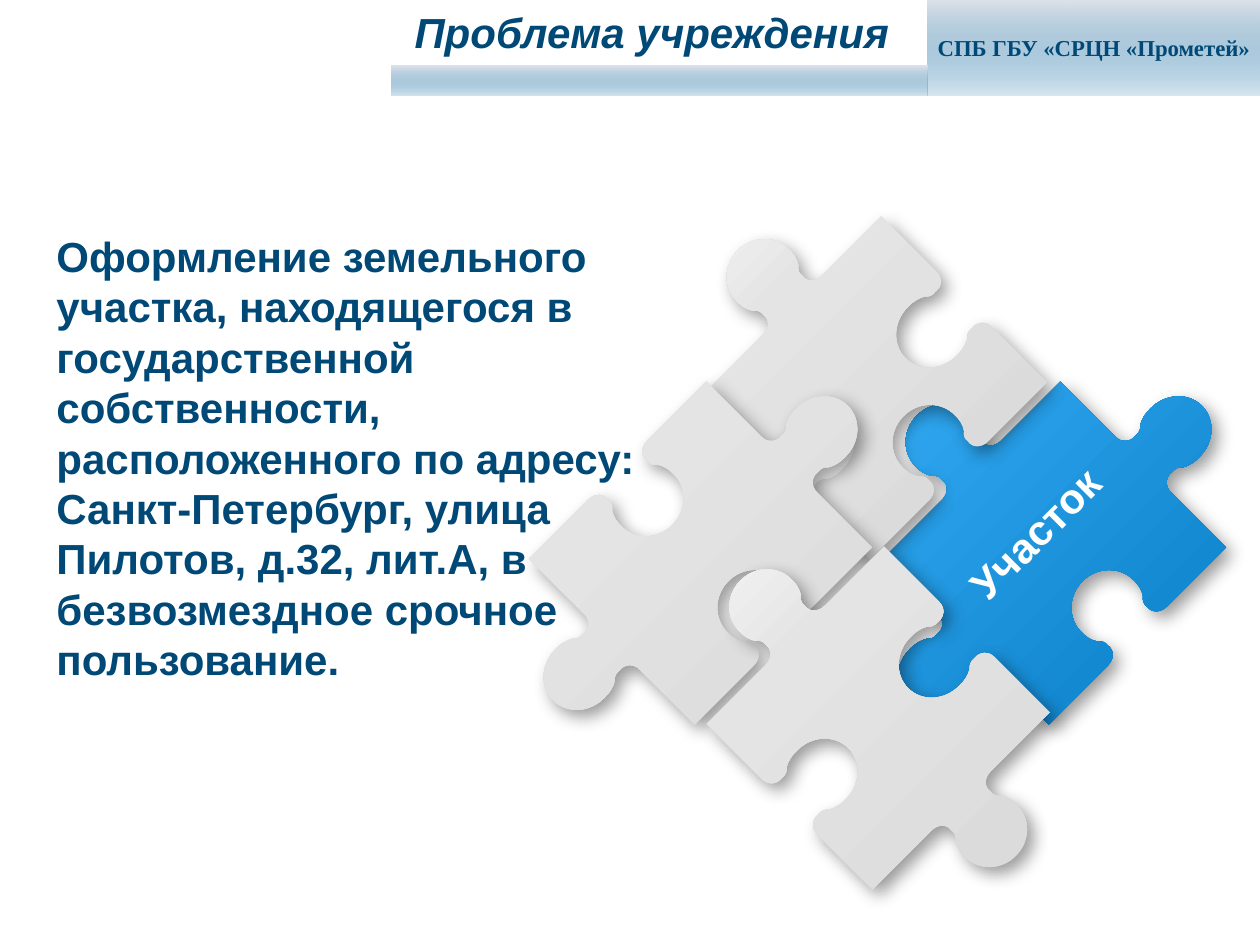
from math import sqrt

from pptx import Presentation
from pptx.dml.color import RGBColor
from pptx.enum.shapes import MSO_SHAPE
from pptx.enum.text import MSO_ANCHOR, MSO_AUTO_SIZE, PP_ALIGN
from pptx.oxml import parse_xml
from pptx.oxml.ns import nsdecls, qn
from pptx.util import Emu, Inches, Pt

NAVY = RGBColor(0x00, 0x49, 0x76)
WHITE = RGBColor(0xFF, 0xFF, 0xFF)
ICE = RGBColor(0xDF, 0xE3, 0xEA)
OCEAN = RGBColor(0x00, 0x62, 0x9E)
BLUE = RGBColor(0x00, 0x77, 0xC0)
SKY = RGBColor(0x40, 0xB6, 0xFF)
GREY = RGBColor(0xD7, 0xD7, 0xD7)
PALE = RGBColor(0xE4, 0xE4, 0xE4)
BLACK = RGBColor(0x00, 0x00, 0x00)

# Gradient stops: position in percent, colour, opacity in percent
BAR_STOPS = [(0, ICE, 100), (100, OCEAN, 15)]
BLUE_STOPS = [(0, BLUE, 100), (100, SKY, 100)]
GREY_STOPS = [(0, GREY, 100), (67, PALE, 100), (100, WHITE, 100)]

PIECE_WIDTH, PIECE_HEIGHT = 1.99, 1.86
TAB, SOCKET = 1, -1

# Left half of a tab in percent of the side: (from the middle, outward).
# A start point, then three points for each Bézier curve.
HALF_TAB = [
    (-16.7, 0),
    (-13, 0), (-10.5, 2.7), (-11, 6),
    (-10.7, 8), (-11.6, 9.5), (-12.8, 10.3),
    (-14.2, 12.5), (-14.9, 15.5), (-14.7, 18.2),
    (-14.7, 26.2), (-8.3, 33.1), (0, 33.1),
]
TAB_PROFILE = HALF_TAB + [(-along, out) for along, out in HALF_TAB[-2::-1]]

# Centre, then top, right, bottom and left sides before rotation
PIECES = [
    ((8.37, 4.39), (TAB, TAB, SOCKET, TAB), BLUE_STOPS, "Участок"),
    ((6.95, 3.08), (TAB, SOCKET, SOCKET, SOCKET), GREY_STOPS, None),
    ((5.56, 4.39), (SOCKET, TAB, SOCKET, TAB), GREY_STOPS, None),
    ((6.97, 5.7), (TAB, SOCKET, TAB, SOCKET), GREY_STOPS, None),
]


def apply_gradient(shape, stops, angle):
    """Fill with a linear gradient whose clockwise angle is in degrees."""
    stop_xml = "".join(
        f'<a:gs pos="{position * 1000}"><a:srgbClr val="{color}">'
        f'<a:alpha val="{opacity * 1000}"/></a:srgbClr></a:gs>'
        for position, color, opacity in stops
    )
    gradient = parse_xml(
        f'<a:gradFill {nsdecls("a")} rotWithShape="1"><a:gsLst>{stop_xml}</a:gsLst>'
        f'<a:lin ang="{angle * 60000}" scaled="0"/></a:gradFill>'
    )
    shape.fill.gradient()
    properties = shape._element.spPr
    properties.replace(properties.find(qn("a:gradFill")), gradient)
    shape.line.fill.background()
    shape.shadow.inherit = False


def add_outer_shadow(shape):
    effects = shape._element.spPr.find(qn("a:effectLst"))
    effects.append(parse_xml(
        f'<a:outerShdw {nsdecls("a")} blurRad="{Pt(10)}" dist="{Pt(5)}" '
        f'dir="{45 * 60000}" algn="ctr" rotWithShape="0"><a:srgbClr val="{BLACK}">'
        '<a:alpha val="40000"/></a:srgbClr></a:outerShdw>'
    ))


def write_text(shape, text, size, color=NAVY, font="Arial", italic=None,
               align=PP_ALIGN.LEFT):
    paragraph = shape.text_frame.paragraphs[0]
    paragraph.alignment = align
    run = paragraph.add_run()
    run.text = text
    run.font.name = font
    run.font.size = Pt(size)
    run.font.bold = True
    run.font.italic = italic
    run.font.color.rgb = color
    return paragraph


def place(shape, left, top, width, height):
    shape.left, shape.top = Inches(left), Inches(top)
    shape.width, shape.height = Inches(width), Inches(height)


def add_bar(slide, left, top, width, height):
    bar = slide.shapes.add_shape(MSO_SHAPE.RECTANGLE, Inches(left), Inches(top),
                                 Inches(width), Inches(height))
    apply_gradient(bar, BAR_STOPS, 90)
    return bar


def add_title(slide, text):
    title = slide.shapes.title
    place(title, 3.19, 0, 3.99, 0.5)
    frame = title.text_frame
    frame.word_wrap = False
    frame.auto_size = MSO_AUTO_SIZE.SHAPE_TO_FIT_TEXT
    frame.vertical_anchor = MSO_ANCHOR.TOP
    write_text(title, text, 24, italic=True)


def add_body(slide, text):
    body = slide.shapes.add_textbox(Inches(0.35), Inches(1.78), Inches(5), Inches(3.74))
    body.text_frame.word_wrap = True
    body.text_frame.auto_size = MSO_AUTO_SIZE.SHAPE_TO_FIT_TEXT
    write_text(body, text, 24)


def piece_outline(sides):
    """Clockwise outline in percent of the side, around the centre of the piece."""
    points = []
    for turns, side in enumerate(sides):
        edge = [(along, -50 - side * out) for along, out in TAB_PROFILE] + [(50, -50)]
        for _ in range(turns):
            edge = [(-y, x) for x, y in edge]
        points += edge
    return points


def round_tabs(shape):
    """Turn the tab points of each side into cubic Bézier curves."""
    lines = list(shape._element.iter(qn("a:lnTo")))
    side_length = len(TAB_PROFILE) + 1
    for start in range(0, 4 * side_length, side_length):
        tab = lines[start + 1:start + len(TAB_PROFILE)]
        for index in range(0, len(tab), 3):
            curve = parse_xml(f'<a:cubicBezTo {nsdecls("a")}/>')
            tab[index].addprevious(curve)
            for line in tab[index:index + 3]:
                curve.append(line[0])
                line.getparent().remove(line)


def tilt(shape, center_x, center_y):
    """Rotate 45 degrees counter-clockwise about the given centre."""
    offset_x = shape.left + shape.width / 2 - center_x
    offset_y = shape.top + shape.height / 2 - center_y
    shape.left = Emu(round(center_x + (offset_x + offset_y) / sqrt(2) - shape.width / 2))
    shape.top = Emu(round(center_y + (offset_y - offset_x) / sqrt(2) - shape.height / 2))
    shape.rotation = 315


def add_piece(slide, center, sides, stops, label):
    center_x, center_y = (Inches(value) for value in center)
    points = [(center_x + Inches(x * PIECE_WIDTH / 100),
               center_y + Inches(y * PIECE_HEIGHT / 100))
              for x, y in piece_outline(sides)]
    builder = slide.shapes.build_freeform(*points[-1])
    builder.add_line_segments(points, close=True)
    piece = builder.convert_to_shape()
    round_tabs(piece)
    tilt(piece, center_x, center_y)
    apply_gradient(piece, stops, 270)
    add_outer_shadow(piece)
    if label:
        frame = piece.text_frame
        frame.margin_left = frame.margin_right = frame.margin_bottom = 0
        frame.margin_top = Inches(0.2)
        frame.vertical_anchor = MSO_ANCHOR.MIDDLE
        paragraph = write_text(piece, label, 24, WHITE, align=PP_ALIGN.CENTER)
        paragraph.line_spacing = 0.95
        paragraph.space_after = Pt(8)


def main():
    presentation = Presentation()
    presentation.slide_width, presentation.slide_height = Inches(10), Inches(7.5)
    slide = presentation.slides.add_slide(presentation.slide_layouts[5])

    header = add_bar(slide, 7.36, 0, 2.64, 0.76)
    header.text_frame.word_wrap = False
    header.text_frame.vertical_anchor = MSO_ANCHOR.MIDDLE
    write_text(header, "СПБ ГБУ «CРЦН «Прометей»", 13, font="Times New Roman",
               align=PP_ALIGN.CENTER)
    add_bar(slide, 3.11, 0.52, 4.25, 0.24)
    add_title(slide, "Проблема учреждения")
    add_body(slide, "Оформление земельного участка, находящегося в государственной "
                    "собственности, расположенного по адресу: Санкт-Петербург, улица "
                    "Пилотов, д.32, лит.А, в безвозмездное срочное пользование.")
    for center, sides, stops, label in PIECES:
        add_piece(slide, center, sides, stops, label)
    presentation.save("out.pptx")


if __name__ == "__main__":
    main()
